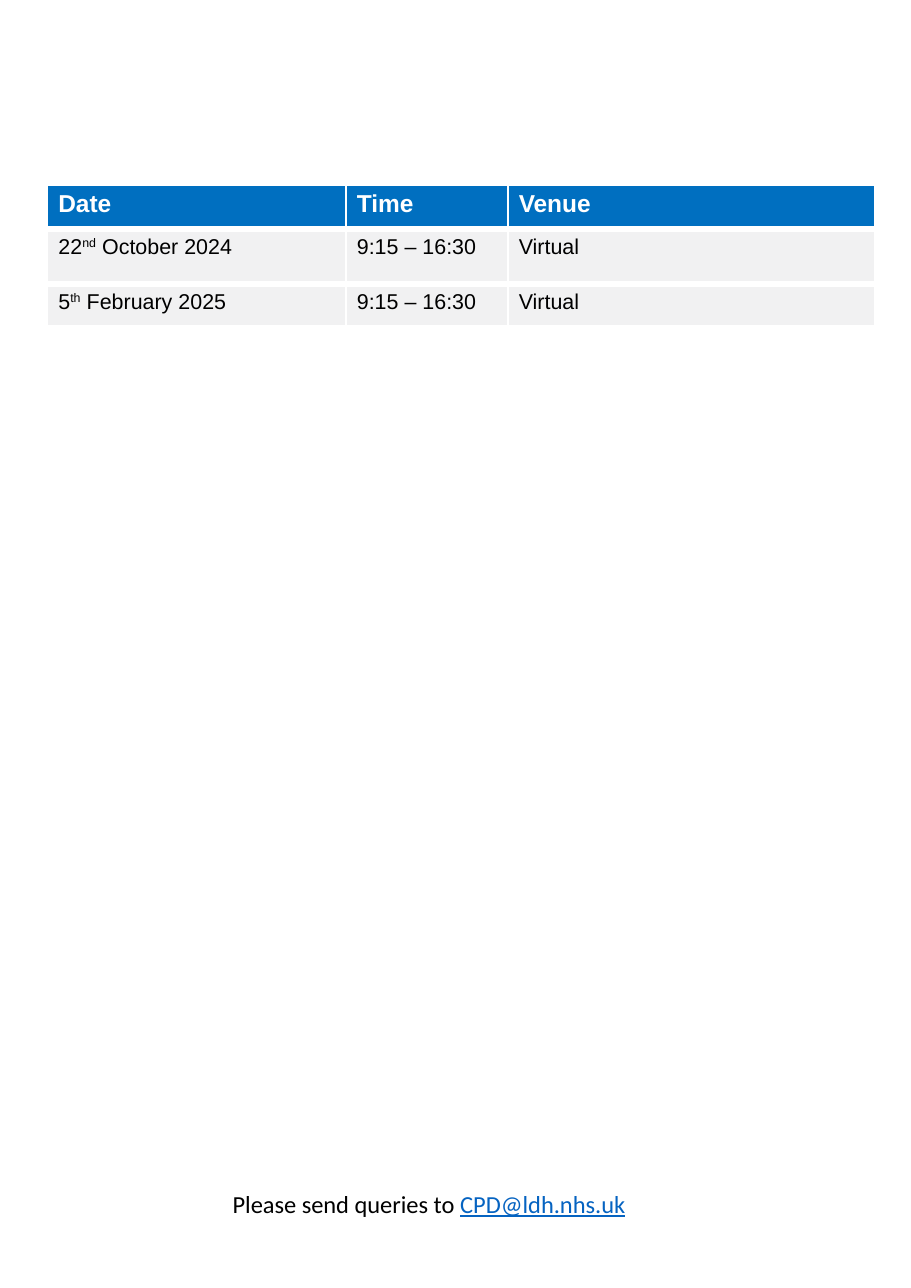
from lxml.etree import SubElement
from pptx import Presentation
from pptx.dml.color import RGBColor
from pptx.enum.text import MSO_ANCHOR as Anchor, PP_ALIGN as Align
from pptx.oxml.ns import qn
from pptx.util import Inches, Pt

WHITE = RGBColor(0xFF, 0xFF, 0xFF)
BLACK = RGBColor(0, 0, 0)
HEADER_BLUE = RGBColor(0x00, 0x6F, 0xC0)
ROW_GREY = RGBColor(0xF1, 0xF1, 0xF2)
LINK_BLUE = RGBColor(0x05, 0x63, 0xC1)

HEADINGS = ["Date", "Time", "Venue"]
SESSIONS = [
    [("22", "nd", " October 2024"), "9:15 – 16:30", "Virtual"],
    [("5", "th", " February 2025"), "9:15 – 16:30", "Virtual"],
]


class SlideBuilder:
    table_font = "Arial"
    contact_font = "Calibri"

    def __init__(self, prs):
        self.slide = prs.slides.add_slide(prs.slide_layouts[6])

    def run(self, p, text, font, size, color, bold=False, underline=False, raised=False):
        r = p.add_run()
        r.text = text
        r.font.name = font
        r.font.size = Pt(size)
        r.font.bold = bold
        r.font.underline = underline
        r.font.color.rgb = color
        if raised:
            r.font._element.set("baseline", "30000")

    def borders(self, cell, top):
        tc_pr = cell._tc.get_or_add_tcPr()
        widths = {"lnL": 1.5, "lnR": 1.5, "lnT": top, "lnB": 4.5}
        for side, width in widths.items():
            line = SubElement(tc_pr, qn(f"a:{side}"), w=str(Pt(width)))
            fill = SubElement(line, qn("a:solidFill"))
            SubElement(fill, qn("a:srgbClr"), val=str(WHITE))

    def cell(self, cell, content, header):
        self.borders(cell, 1.5 if header else 4.5)
        cell.fill.solid()
        cell.fill.fore_color.rgb = HEADER_BLUE if header else ROW_GREY
        cell.margin_left = Inches(0.1)
        cell.margin_top = Inches(0.05)
        cell.margin_right = cell.margin_bottom = 0
        cell.vertical_anchor = Anchor.TOP
        p = cell.text_frame.paragraphs[0]
        parts = (content,) if isinstance(content, str) else content
        for i, part in enumerate(parts):
            self.run(p, part, self.table_font, 16 if header else 14,
                     WHITE if header else BLACK, bold=header, raised=i == 1)

    def table(self, left, top, widths, heights, rows):
        frame = self.slide.shapes.add_table(
            len(rows), len(widths), Inches(left), Inches(top),
            Inches(sum(widths)), Inches(sum(heights)))
        table = frame.table
        table.horz_banding = False
        for column, width in zip(table.columns, widths):
            column.width = Inches(width)
        for i, (row, height) in enumerate(zip(table.rows, heights)):
            row.height = Inches(height)
            for cell, content in zip(row.cells, rows[i]):
                self.cell(cell, content, header=i == 0)

    def contact(self, left, top, width, height, lead, address):
        box = self.slide.shapes.add_textbox(
            Inches(left), Inches(top), Inches(width), Inches(height))
        tf = box.text_frame
        tf.word_wrap = True
        p = tf.paragraphs[0]
        p.alignment = Align.CENTER
        self.run(p, lead, self.contact_font, 16, BLACK)
        self.run(p, address, self.contact_font, 16, LINK_BLUE, underline=True)


def main():
    prs = Presentation()
    prs.slide_width = Inches(8.27)
    prs.slide_height = Inches(11.69)
    s = SlideBuilder(prs)
    s.table(0.43, 1.68, [2.71, 1.47, 3.33], [0.4, 0.5, 0.4], [HEADINGS, *SESSIONS])
    s.contact(0.38, 10.74, 7.03, 0.37, "Please send queries to ", "CPD@ldh.nhs.uk")
    prs.save("out.pptx")


if __name__ == "__main__":
    main()
